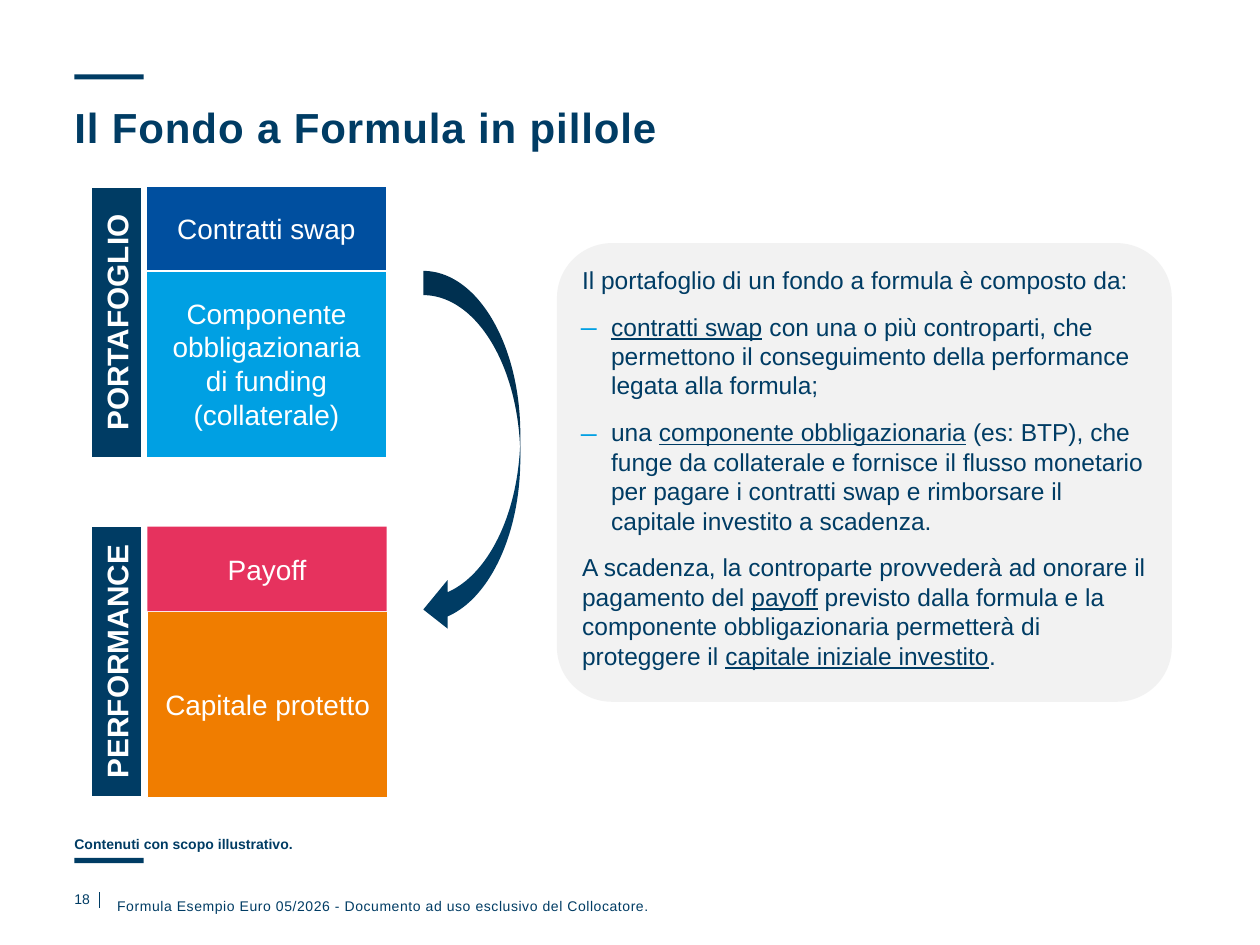
from dataclasses import dataclass

from lxml.etree import SubElement
from pptx import Presentation
from pptx.dml.color import RGBColor
from pptx.enum.shapes import MSO_CONNECTOR, MSO_SHAPE
from pptx.enum.text import MSO_ANCHOR, PP_ALIGN
from pptx.oxml.ns import qn
from pptx.util import Pt

EMU_PER_PX = 9144  # 100 px to the inch
FONT = "Arial"
NAVY, WHITE, SKY = "003C64", "FFFFFF", "00A0E3"


@dataclass
class Frame:
    left: int
    top: int
    width: int
    height: int


@dataclass
class Block:
    frame: Frame
    text: str
    fill: str
    outlined: bool = True
    size: int = 16
    bold: bool = False
    rotation: int = 0


@dataclass
class BodyParagraph:
    pieces: list[str]  # plain and underlined pieces in turn, plain first
    bulleted: bool = False


BLOCKS = [
    Block(Frame(116, 214, 191, 149),
          "Componente obbligazionaria di funding (collaterale)", SKY),
    Block(Frame(116, 148, 191, 67), "Contratti swap", "004F9F"),
    Block(Frame(-15, 236, 215, 40), "PORTAFOGLIO", NAVY, size=17, bold=True, rotation=270),
    Block(Frame(117, 485, 191, 148), "Capitale protetto", "F07D00"),
    Block(Frame(117, 418, 190, 67), "Payoff", "E6325E", outlined=False),
    Block(Frame(-15, 505, 215, 40), "PERFORMANCE", NAVY, size=17, bold=True, rotation=270),
]

BODY = [
    BodyParagraph(["Il portafoglio di un fondo a formula è composto da:"]),
    BodyParagraph(["", "contratti swap",
                   " con una o più controparti, che permettono il conseguimento "
                   "della performance legata alla formula;"], bulleted=True),
    BodyParagraph(["una ", "componente obbligazionaria",
                   " (es: BTP), che funge da collaterale e fornisce il flusso monetario "
                   "per pagare i contratti swap e rimborsare il capitale investito "
                   "a scadenza."], bulleted=True),
    BodyParagraph(["A scadenza, la controparte provvederà ad onorare il pagamento del ",
                   "payoff",
                   " previsto dalla formula e la componente obbligazionaria permetterà "
                   "di proteggere il ", "capitale iniziale investito", "."]),
]


def px(value: int) -> int:
    return value * EMU_PER_PX


def color(value: str) -> RGBColor:
    return RGBColor.from_string(value)


def place(frame: Frame) -> tuple[int, int, int, int]:
    return px(frame.left), px(frame.top), px(frame.width), px(frame.height)


def style(span, size: float, ink: str = NAVY, bold: bool = False, spacing: float = 0) -> None:
    span.font.name = FONT
    span.font.size = Pt(size)
    span.font.bold = bold
    span.font.color.rgb = color(ink)
    if spacing:
        span.font._element.set("spc", str(round(spacing * 100)))


def add_shape(page, kind: MSO_SHAPE, frame: Frame, fill: str, outlined: bool = False):
    shape = page.shapes.add_shape(kind, *place(frame))
    shape.shadow.inherit = False
    shape.fill.solid()
    shape.fill.fore_color.rgb = color(fill)
    if outlined:
        shape.line.color.rgb = color(WHITE)
        shape.line.width = Pt(1)
    else:
        shape.line.fill.background()
    return shape


def add_block(page, block: Block) -> None:
    shape = add_shape(page, MSO_SHAPE.RECTANGLE, block.frame, block.fill, block.outlined)
    shape.rotation = block.rotation
    shape.text_frame.text = block.text
    shape.text_frame.word_wrap = True
    shape.text_frame.vertical_anchor = MSO_ANCHOR.MIDDLE
    para = shape.text_frame.paragraphs[0]
    para.alignment = PP_ALIGN.CENTER
    style(para.runs[0], block.size, WHITE, block.bold)


def add_box(page, frame: Frame):
    box = page.shapes.add_textbox(*place(frame))
    text_frame = box.text_frame
    text_frame.word_wrap = True
    text_frame.margin_left = text_frame.margin_right = 0
    text_frame.margin_top = text_frame.margin_bottom = 0
    return text_frame


def add_label(page, frame: Frame, text: str, size: float = 8,
              bold: bool = False, spacing: float = 0):
    text_frame = add_box(page, frame)
    text_frame.text = text
    style(text_frame.paragraphs[0].runs[0], size, bold=bold, spacing=spacing)
    return text_frame


def add_rule(page, left: int, top: int, bottom: int) -> None:
    rule = page.shapes.add_connector(
        MSO_CONNECTOR.STRAIGHT, px(left), px(top), px(left), px(bottom))
    rule.line.color.rgb = color(NAVY)
    rule.line.width = Pt(0.5)
    SubElement(rule._element.spPr, qn("a:effectLst"))


def indent(para, bulleted: bool) -> None:
    properties = para._p.get_or_add_pPr()
    properties.set("marL", str(px(24 if bulleted else 1)))
    properties.set("indent", str(px(-24 if bulleted else 0)))
    if bulleted:
        bullet_color = SubElement(properties, qn("a:buClr"))
        SubElement(bullet_color, qn("a:srgbClr"), val=SKY)
        SubElement(properties, qn("a:buSzPct"), val="130000")
        SubElement(properties, qn("a:buFont"), typeface=FONT)
        SubElement(properties, qn("a:buChar"), char="⎯")


def add_body(page, frame: Frame, paragraphs: list[BodyParagraph]) -> None:
    text_frame = add_box(page, frame)
    for number, item in enumerate(paragraphs):
        para = text_frame.add_paragraph() if number else text_frame.paragraphs[0]
        indent(para, item.bulleted)
        if number:
            para.space_before = Pt(10)
        for position, piece in enumerate(item.pieces):
            if piece:
                span = para.add_run()
                span.text = piece
                style(span, 14)
                span.font.underline = position % 2 == 1


def main() -> None:
    deck = Presentation()
    deck.slide_width, deck.slide_height = px(1000), px(750)
    page = deck.slides.add_slide(deck.slide_layouts[6])

    # Accent bars and footer divider
    for top in (59, 681):
        add_shape(page, MSO_SHAPE.RECTANGLE, Frame(59, top, 55, 4), NAVY)
    add_rule(page, 79, 708, 721)

    # Title
    title = add_label(page, Frame(59, 85, 882, 42), "Il Fondo a Formula in pillole",
                      24, bold=True, spacing=0.5)
    title.paragraphs[0].line_spacing = 0.9

    # Explanation panel
    panel = add_shape(page, MSO_SHAPE.ROUNDED_RECTANGLE, Frame(442, 193, 488, 364), "F2F2F2")
    panel.adjustments[0] = 0.12
    add_body(page, Frame(461, 210, 449, 329), BODY)

    # Portfolio and performance stacks, joined by the arrow
    for block in BLOCKS:
        add_block(page, block)
    add_shape(page, MSO_SHAPE.CURVED_LEFT_ARROW, Frame(336, 215, 77, 288), NAVY)

    # Note and footer
    note = add_label(page, Frame(59, 658, 882, 24), "Contenuti con scopo illustrativo.", bold=True)
    note.vertical_anchor = MSO_ANCHOR.MIDDLE
    add_label(page, Frame(59, 707, 20, 20), "18")
    add_label(page, Frame(93, 712, 660, 24),
              "Formula Esempio Euro 05/2026 - Documento ad uso esclusivo del Collocatore.",
              spacing=0.3)

    deck.save("out.pptx")


if __name__ == "__main__":
    main()
